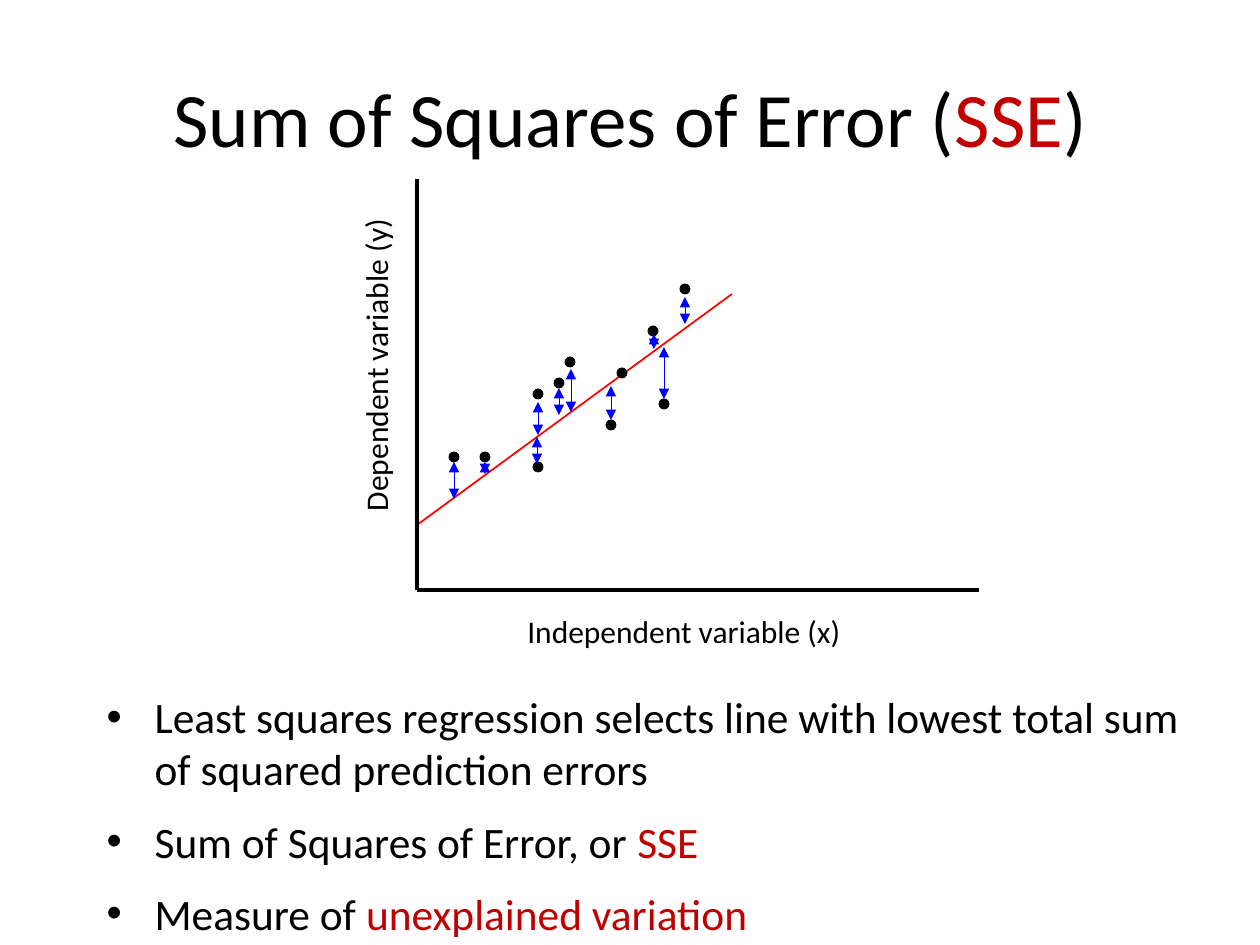
import pptx
import pptx.dml.color
import pptx.enum.shapes
import pptx.enum.text
import pptx.oxml.ns
import pptx.util
from lxml import etree

EMU_PER_PX = 914400 / 126
FONT = "Calibri"
BLACK, ACCENT, RED, BLUE = "000000", "C00000", "FF0000", "0000FF"
DOT = 10

# Observations: centre x, centre y, error arrow (x, top, bottom)
OBSERVATIONS = [
    (454, 457, (454, 462, 499)),
    (485, 457, (485, 462, 474)),
    (538, 467, (537, 437, 464)),
    (538, 394, (538, 402, 435)),
    (559, 383, (559, 388, 415)),
    (570, 362, (571, 369, 412)),
    (611, 425, (611, 386, 420)),
    (622, 373, None),
    (664, 404, (664, 347, 399)),
    (685, 289, (685, 297, 324)),
    (653, 331, (654, 334, 349)),
]


def px(length):
    return pptx.util.Emu(round(length * EMU_PER_PX))


def colour(hex_value):
    return pptx.dml.color.RGBColor.from_string(hex_value)


def set_values(target, values):
    for name, value in values.items():
        setattr(target, name, value)


def place(shape, left, top, width, height):
    set_values(shape, {"left": px(left), "top": px(top),
                       "width": px(width), "height": px(height)})


def write(paragraph, parts, size):
    """Write (words, colour) parts as runs of one paragraph."""
    for words, hex_value in parts:
        run = paragraph.add_run()
        run.text = words
        set_values(run.font, {"name": FONT, "size": pptx.util.Pt(size)})
        run.font.color.rgb = colour(hex_value)


def add_title(slide, parts):
    title = slide.shapes.title
    place(title, 63, 38, 1134, 157)
    set_values(title.text_frame, {
        "auto_size": pptx.enum.text.MSO_AUTO_SIZE.NONE,
        "vertical_anchor": pptx.enum.text.MSO_ANCHOR.MIDDLE})
    heading = title.text_frame.paragraphs[0]
    heading.alignment = pptx.enum.text.PP_ALIGN.CENTER
    write(heading, parts, 44)


def add_bullets(slide, points):
    body = slide.placeholders[1]
    place(body, 94, 684, 1134, 241)
    frame = body.text_frame
    frame.auto_size = pptx.enum.text.MSO_AUTO_SIZE.NONE
    for index, parts in enumerate(points):
        point = frame.add_paragraph() if index else frame.paragraphs[0]
        point.space_before = pptx.util.Pt(11.5)
        properties = point._p.get_or_add_pPr()
        properties.set("marL", str(px(48)))
        properties.set("indent", str(-px(48)))
        write(point, parts, 24.8)


def add_line(shapes, start, end, hex_value, width, arrows=False):
    line = shapes.add_connector(pptx.enum.shapes.MSO_CONNECTOR.STRAIGHT,
                                *map(px, start + end))
    line.line.color.rgb = colour(hex_value)
    line.line.width = pptx.util.Pt(width)
    if arrows:
        outline = line.line._get_or_add_ln()
        for tag in ("a:headEnd", "a:tailEnd"):
            etree.SubElement(outline, pptx.oxml.ns.qn(tag), type="triangle")
    etree.SubElement(line._element.spPr, pptx.oxml.ns.qn("a:effectLst"))


def add_dot(shapes, x, y):
    dot = shapes.add_shape(pptx.enum.shapes.MSO_SHAPE.OVAL,
                           px(x - DOT / 2), px(y - DOT / 2), px(DOT), px(DOT))
    dot.shadow.inherit = False
    dot.fill.solid()
    dot.fill.fore_color.rgb = colour(BLACK)
    dot.line.color.rgb = colour(BLACK)
    dot.line.width = pptx.util.Pt(0.5)


def add_axis_label(shapes, words, box, rotation=0):
    label = shapes.add_textbox(*map(px, box))
    label.rotation = rotation
    label.text_frame.word_wrap = True
    write(label.text_frame.paragraphs[0], [(words, BLACK)], 18)


def add_scatter(slide):
    shapes = slide.shapes.add_group_shape().shapes
    # Regression line and axes
    origin = (417, 590)
    add_line(shapes, (417, 525), (732, 294), RED, 1)
    add_line(shapes, (417, 179), origin, BLACK, 2)
    add_line(shapes, origin, (979, 590), BLACK, 2)
    add_axis_label(shapes, "Independent variable (x)", (515, 606, 365, 50))
    add_axis_label(shapes, "Dependent variable (y)", (208, 331, 335, 50), 270)
    # Observations and their errors
    for x, y, error in OBSERVATIONS:
        add_dot(shapes, x, y)
        if error:
            error_x, top, bottom = error
            add_line(shapes, (error_x, top), (error_x, bottom), BLUE, 0.25, arrows=True)


def main():
    deck = pptx.Presentation()
    set_values(deck, {"slide_width": px(1260), "slide_height": px(945)})
    slide = deck.slides.add_slide(deck.slide_layouts[1])
    add_title(slide, [("Sum of Squares of Error (", BLACK), ("SSE", ACCENT), (")", BLACK)])
    add_bullets(slide, [
        [("Least squares regression selects line with lowest total sum "
          "of squared prediction errors", BLACK)],
        [("Sum of Squares of Error, or ", BLACK), ("SSE", ACCENT)],
        [("Measure of ", BLACK), ("unexplained variation", ACCENT)],
    ])
    add_scatter(slide)
    deck.save("out.pptx")


if __name__ == "__main__":
    main()
